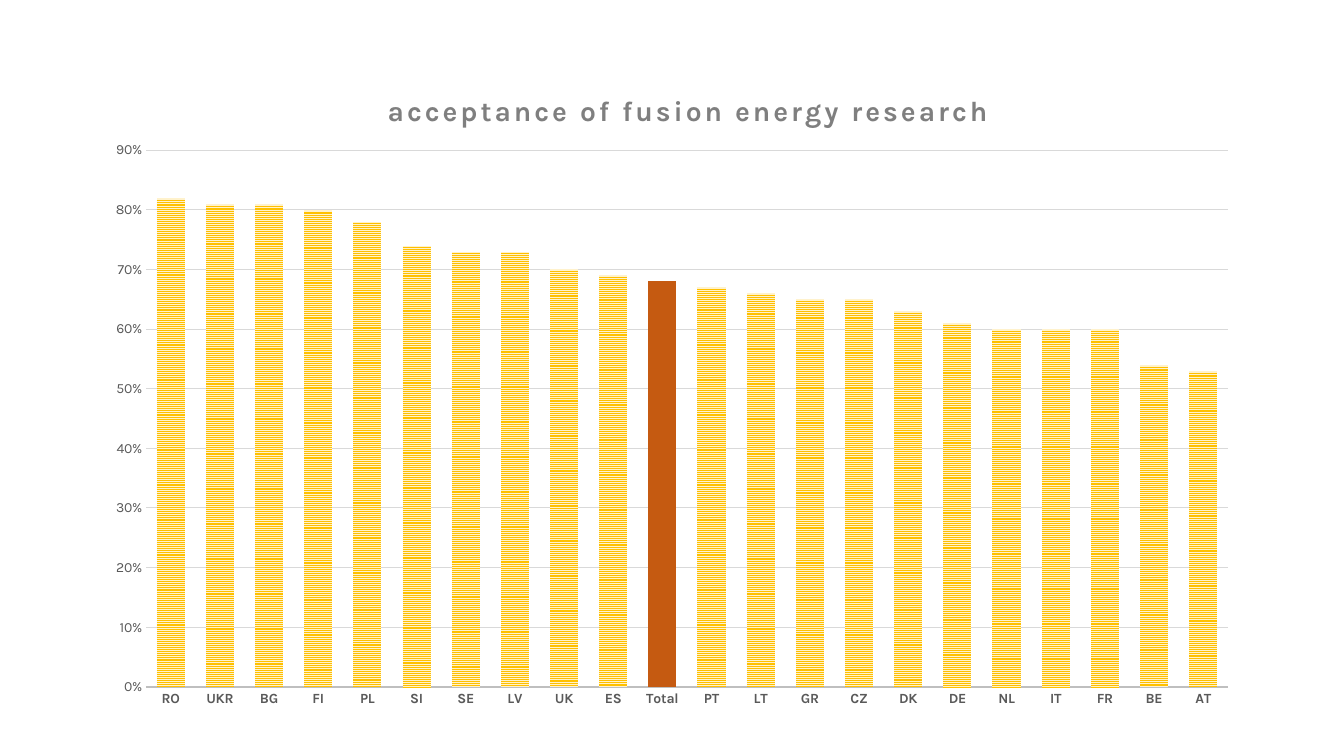
from typing import NamedTuple

from lxml import etree
from pptx import Presentation
from pptx.chart.data import CategoryChartData
from pptx.dml.color import RGBColor
from pptx.enum.chart import XL_CHART_TYPE, XL_TICK_MARK
from pptx.enum.dml import MSO_PATTERN
from pptx.oxml import parse_xml
from pptx.oxml.ns import nsdecls
from pptx.util import Inches, Pt

COLUMNS = XL_CHART_TYPE.COLUMN_CLUSTERED
NO_TICKS = XL_TICK_MARK.NONE
STRIPES = MSO_PATTERN.NARROW_HORIZONTAL

BLACK = RGBColor(0x00, 0x00, 0x00)
TITLE_GREY = RGBColor(0x7F, 0x7F, 0x7F)
LABEL_GREY = RGBColor(0x59, 0x59, 0x59)
AXIS_GREY = RGBColor(0xBF, 0xBF, 0xBF)
GRID_GREY = RGBColor(0xD9, 0xD9, 0xD9)
GOLD = RGBColor(0xFF, 0xC0, 0x00)
CREAM = RGBColor(0xFF, 0xF2, 0xCC)
RUST = RGBColor(0xC5, 0x5A, 0x11)

FONT = "Karla"
TOTAL = "Total"


class Acceptance(NamedTuple):
    country: str
    share: float


ACCEPTANCE = [
    Acceptance("RO", 0.82), Acceptance("UKR", 0.81), Acceptance("BG", 0.81),
    Acceptance("FI", 0.80), Acceptance("PL", 0.78), Acceptance("SI", 0.74),
    Acceptance("SE", 0.73), Acceptance("LV", 0.73), Acceptance("UK", 0.70),
    Acceptance("ES", 0.69), Acceptance(TOTAL, 0.68), Acceptance("PT", 0.67),
    Acceptance("LT", 0.66), Acceptance("GR", 0.65), Acceptance("CZ", 0.65),
    Acceptance("DK", 0.63), Acceptance("DE", 0.61), Acceptance("NL", 0.60),
    Acceptance("IT", 0.60), Acceptance("FR", 0.60), Acceptance("BE", 0.54),
    Acceptance("AT", 0.53),
]


def format_font(font, *, size: float = 10, color: RGBColor = LABEL_GREY,
                bold: bool = False) -> None:
    font.name, font.size, font.bold = FONT, Pt(size), bold
    font.color.rgb = color


def write_text(frame, text: str, *, spacing: float = 0, **font_format) -> None:
    """Fill the frame with one run; spacing is the letter spacing in points."""
    run = frame.paragraphs[0].add_run()
    run.text = text
    format_font(run.font, **font_format)
    run.font._element.set("spc", str(round(spacing * 100)))


def manual_layout(inner: bool = False, **fractions: float) -> etree._Element:
    """Place a chart part by fractions x, y, w and h of the chart's size."""
    target = '<c:layoutTarget val="inner"/>' if inner else ""
    modes = "".join(f'<c:{key}Mode val="edge"/>' for key in "xy")
    places = "".join(f'<c:{key} val="{val}"/>' for key, val in fractions.items())
    return parse_xml(f'<c:layout {nsdecls("c")}><c:manualLayout>{target}{modes}'
                     f"{places}</c:manualLayout></c:layout>")


def set_layout(parent, layout: etree._Element, index: int) -> None:
    for old in parent.findall(layout.tag):
        parent.remove(old)
    parent.insert(index, layout)


def style_axes(chart) -> None:
    countries, shares = chart.category_axis, chart.value_axis
    for axis in (countries, shares):
        axis.major_tick_mark = axis.minor_tick_mark = NO_TICKS
        format_font(axis.tick_labels.font, bold=axis is countries)
    countries.format.line.color.rgb = AXIS_GREY
    countries.format.line.width = Pt(1.5)

    shares.minimum_scale, shares.maximum_scale, shares.major_unit = 0, 0.9, 0.1
    shares.tick_labels.number_format = "0%"
    shares.tick_labels.number_format_is_linked = False
    shares.format.line.fill.background()
    shares.has_major_gridlines = True
    grid = shares.major_gridlines.format.line
    grid.color.rgb = GRID_GREY
    grid.width = Pt(0.75)


def style_columns(plot) -> None:
    plot.gap_width, plot.overlap, plot.vary_by_categories = 75, 40, False
    columns = plot.series[0]
    columns.invert_if_negative = False
    fill = columns.format.fill
    fill.patterned()
    fill.pattern = STRIPES
    fill.fore_color.rgb, fill.back_color.rgb = GOLD, CREAM

    total_index = [row.country for row in ACCEPTANCE].index(TOTAL)
    total_fill = columns.points[total_index].format.fill
    total_fill.solid()
    total_fill.fore_color.rgb = RUST


def add_acceptance_chart(slide) -> None:
    data = CategoryChartData(number_format="0%")
    data.categories = [row.country for row in ACCEPTANCE]
    data.add_series("Series 1", [row.share for row in ACCEPTANCE])
    chart = slide.shapes.add_chart(COLUMNS, Inches(0.92), Inches(0.6),
                                   Inches(11.5), Inches(6.55), data).chart
    format_font(chart.font, color=BLACK)
    chart.has_legend = False
    chart.has_title = True
    title = chart.chart_title
    write_text(title.text_frame, "acceptance of fusion energy research",
               size=20, color=TITLE_GREY, bold=True, spacing=2)
    title.include_in_layout = False
    set_layout(title._element, manual_layout(x=0.25, y=0.04), 1)
    plot_area = chart._chartSpace.chart.plotArea
    set_layout(plot_area, manual_layout(True, x=0.046, y=0.136, w=0.933, h=0.813), 0)
    style_axes(chart)
    style_columns(chart.plots[0])


def main() -> None:
    presentation = Presentation()
    presentation.slide_width, presentation.slide_height = Inches(13.33), Inches(7.5)
    add_acceptance_chart(presentation.slides.add_slide(presentation.slide_layouts[6]))
    presentation.save("out.pptx")


if __name__ == "__main__":
    main()
